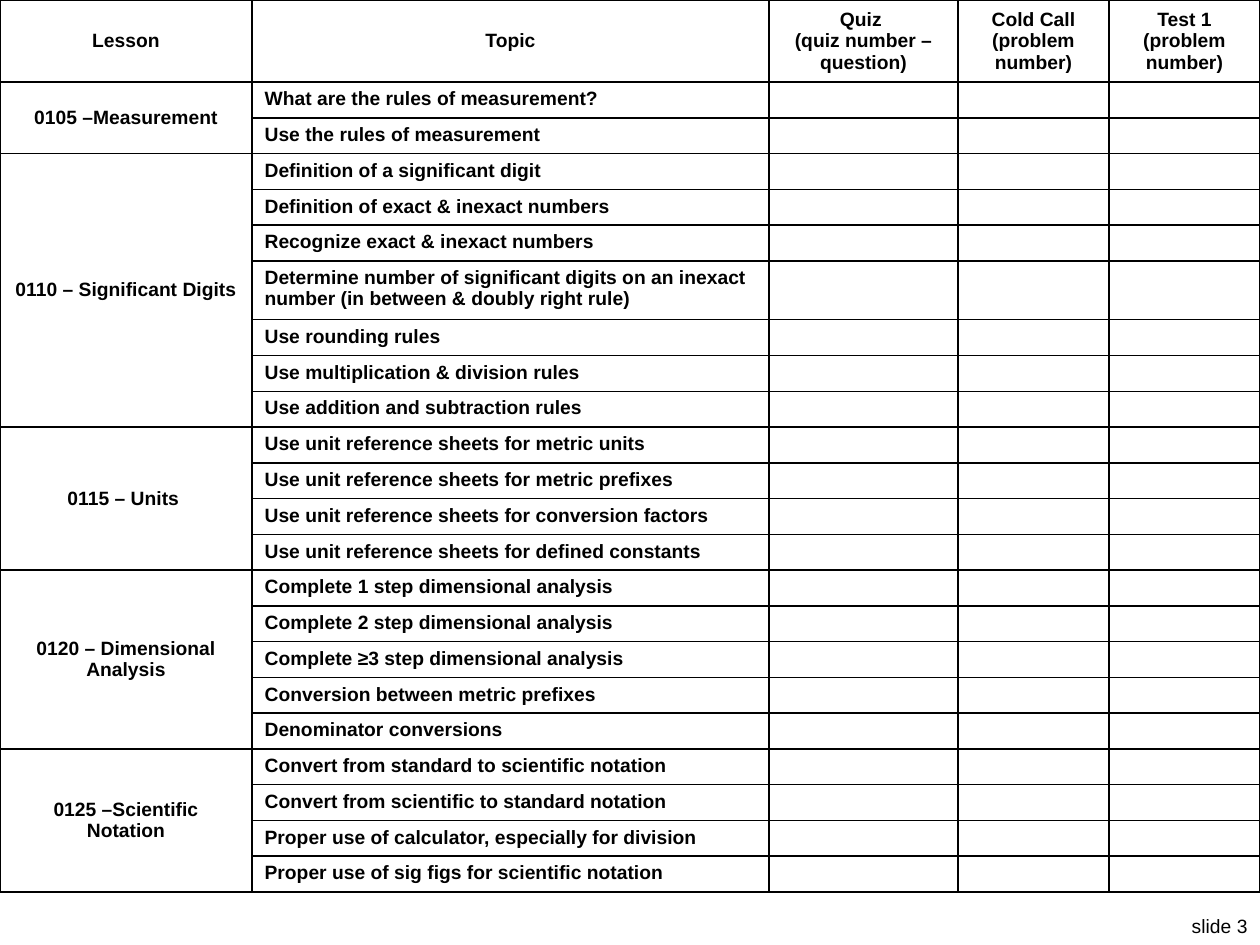
from pptx import Presentation
from pptx import util as u
from pptx.dml.color import RGBColor
from pptx.enum import text
from pptx.oxml.ns import qn
from lxml import etree

PX = 914400 / 126
INK = "000000"
FONT = {"name": "Arial", "size": u.Pt(11)}
BOLD = {**FONT, "bold": True}

COLUMN_WIDTHS = [252, 517, 189, 151, 151]
HEADER_HEIGHT, TALL_HEIGHT, TABLE_HEIGHT = 82, 58, 891

HEADERS = ["Lesson", "Topic", "Quiz \n(quiz number – question)",
           "Cold Call (problem number)", "Test 1 (problem number)"]
TALL_TOPIC = ("Determine number of significant digits on an inexact number "
              "(in between & doubly right rule)")
LESSONS = {
    "0105 –Measurement": [
        "What are the rules of measurement?",
        "Use the rules of measurement"],
    "0110 – Significant Digits": [
        "Definition of a significant digit",
        "Definition of exact & inexact numbers",
        "Recognize exact & inexact numbers",
        TALL_TOPIC,
        "Use rounding rules",
        "Use multiplication & division rules",
        "Use addition and subtraction rules"],
    "0115 – Units ": [
        "Use unit reference sheets for metric units",
        "Use unit reference sheets for metric prefixes",
        "Use unit reference sheets for conversion factors",
        "Use unit reference sheets for defined constants"],
    "0120 – Dimensional Analysis": [
        "Complete 1 step dimensional analysis",
        "Complete 2 step dimensional analysis",
        "Complete ≥3 step dimensional analysis",
        "Conversion between metric prefixes",
        "Denominator conversions"],
    "0125 –Scientific Notation": [
        "Convert from standard to scientific notation",
        "Convert from scientific to standard notation",
        "Proper use of calculator, especially for division",
        "Proper use of sig figs for scientific notation"],
}


def px(length):
    return u.Emu(round(length * PX))


def color(code):
    return RGBColor.from_string(code)


def write(frame, words, style, align):
    frame.text = words
    for paragraph in frame.paragraphs:
        paragraph.alignment = align
        for run in paragraph.runs:
            for key, value in style.items():
                setattr(run.font, key, value)
            run.font.color.rgb = color(INK)


def fill_cell(cell, words, centered=True):
    write(cell.text_frame, words, BOLD,
          text.PP_ALIGN.CENTER if centered else text.PP_ALIGN.LEFT)
    if centered:
        cell.vertical_anchor = text.MSO_ANCHOR.MIDDLE


def plain_cell(cell):
    """Black borders, no fill, and small type so that an empty row stays low."""
    properties = cell._tc.get_or_add_tcPr()
    for side in ("lnL", "lnR", "lnT", "lnB"):
        line = etree.SubElement(properties, qn(f"a:{side}"), w=str(u.Pt(1)))
        solid = etree.SubElement(line, qn("a:solidFill"))
        etree.SubElement(solid, qn("a:srgbClr"), val=INK)
    cell.fill.background()
    if not cell.text_frame.text:
        paragraph = cell.text_frame.paragraphs[0]._p
        etree.SubElement(paragraph, qn("a:endParaRPr"), sz="1100", b="1")


def add_checklist(slide):
    topics = [topic for group in LESSONS.values() for topic in group]
    checklist = slide.shapes.add_table(
        len(topics) + 1, len(HEADERS), 0, 0,
        px(sum(COLUMN_WIDTHS)), px(TABLE_HEIGHT)).table
    checklist.first_row = checklist.horz_banding = False

    # Column widths and row heights
    for column, width in zip(checklist.columns, COLUMN_WIDTHS):
        column.width = px(width)
    topic_height = (TABLE_HEIGHT - HEADER_HEIGHT - TALL_HEIGHT) / (len(topics) - 1)
    checklist.rows[0].height = px(HEADER_HEIGHT)
    for row, topic in enumerate(topics, 1):
        checklist.rows[row].height = px(
            TALL_HEIGHT if topic == TALL_TOPIC else topic_height)

    # Headings, then one merged lesson cell beside its topics
    for column, heading in enumerate(HEADERS):
        fill_cell(checklist.cell(0, column), heading)
    row = 1
    for lesson, group in LESSONS.items():
        first = checklist.cell(row, 0)
        first.merge(checklist.cell(row + len(group) - 1, 0))
        fill_cell(first, lesson)
        for topic in group:
            fill_cell(checklist.cell(row, 1), topic, centered=False)
            row += 1

    for cell in checklist.iter_cells():
        plain_cell(cell)


def add_page_label(slide, words):
    label = slide.shapes.add_textbox(px(1166), px(908), px(94), px(37))
    label.text_frame.word_wrap = False
    write(label.text_frame, words, FONT, text.PP_ALIGN.RIGHT)


def main():
    deck = Presentation()
    deck.slide_width, deck.slide_height = px(1260), px(945)
    slide = deck.slides.add_slide(deck.slide_layouts[6])
    add_page_label(slide, "slide 3")
    add_checklist(slide)
    deck.save("out.pptx")


if __name__ == "__main__":
    main()
